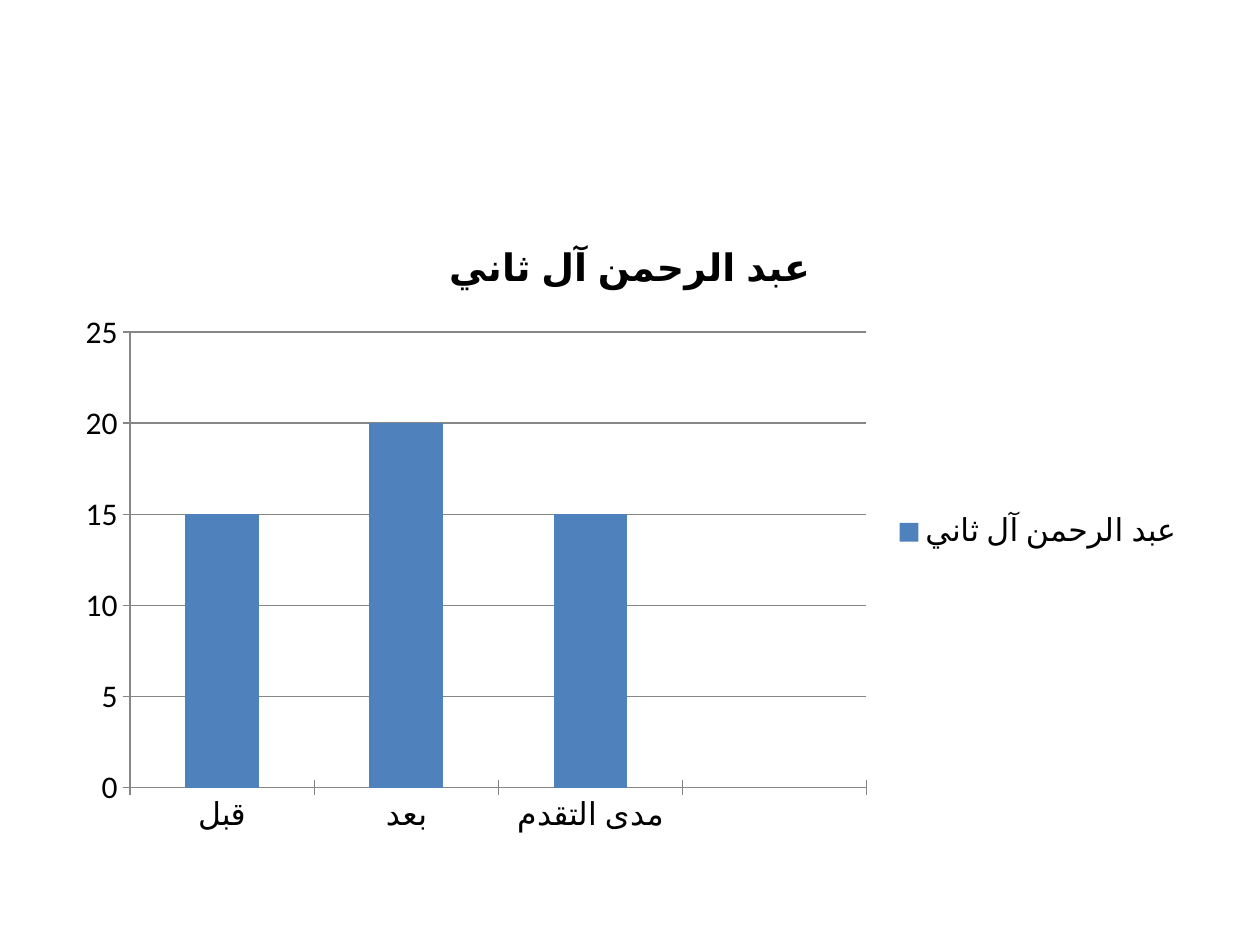
from pptx import Presentation
from pptx.chart import data
from pptx.dml.color import RGBColor
from pptx.enum import chart as ch
from pptx.util import Pt

THEME = {
    "font": "Calibri",
    "text": RGBColor(0x00, 0x00, 0x00),
    "bars": RGBColor(0x4F, 0x81, 0xBD),
    "lines": RGBColor(0x86, 0x86, 0x86),
    "label_size": Pt(18),
    "title_size": Pt(21.6),
}

prs = Presentation()
prs.slide_width, prs.slide_height = Pt(720), Pt(540)
slide = prs.slides.add_slide(prs.slide_layouts[6])

student = "عبد الرحمن آل ثاني"
scores = data.CategoryChartData()
scores.categories = ["قبل", "بعد", "مدى التقدم", ""]
scores.add_series(student, [15, 20, 15, None])

progress = slide.shapes.add_chart(
    ch.XL_CHART_TYPE.COLUMN_CLUSTERED, Pt(36), Pt(126), Pt(648), Pt(356.4), scores
).chart
progress.font.name = THEME["font"]
progress.font.size = THEME["label_size"]
progress.font.color.rgb = THEME["text"]

progress.has_title = True
heading = progress.chart_title.text_frame.paragraphs[0]
heading.text = student
heading.font.name = THEME["font"]
heading.font.size = THEME["title_size"]
heading.font.bold = True
heading.font.color.rgb = THEME["text"]

progress.has_legend = True
progress.legend.position = ch.XL_LEGEND_POSITION.RIGHT
progress.legend.include_in_layout = False

bars = progress.plots[0]
bars.gap_width = 150
bars.vary_by_categories = False
bars.series[0].format.fill.solid()
bars.series[0].format.fill.fore_color.rgb = THEME["bars"]

for axis in (progress.category_axis, progress.value_axis):
    axis.major_tick_mark = ch.XL_TICK_MARK.CROSS
    axis.format.line.color.rgb = THEME["lines"]

score_axis = progress.value_axis
score_axis.minimum_scale, score_axis.maximum_scale = 0, 25
score_axis.major_unit = 5
score_axis.has_major_gridlines = True
score_axis.major_gridlines.format.line.color.rgb = THEME["lines"]

prs.save("out.pptx")
